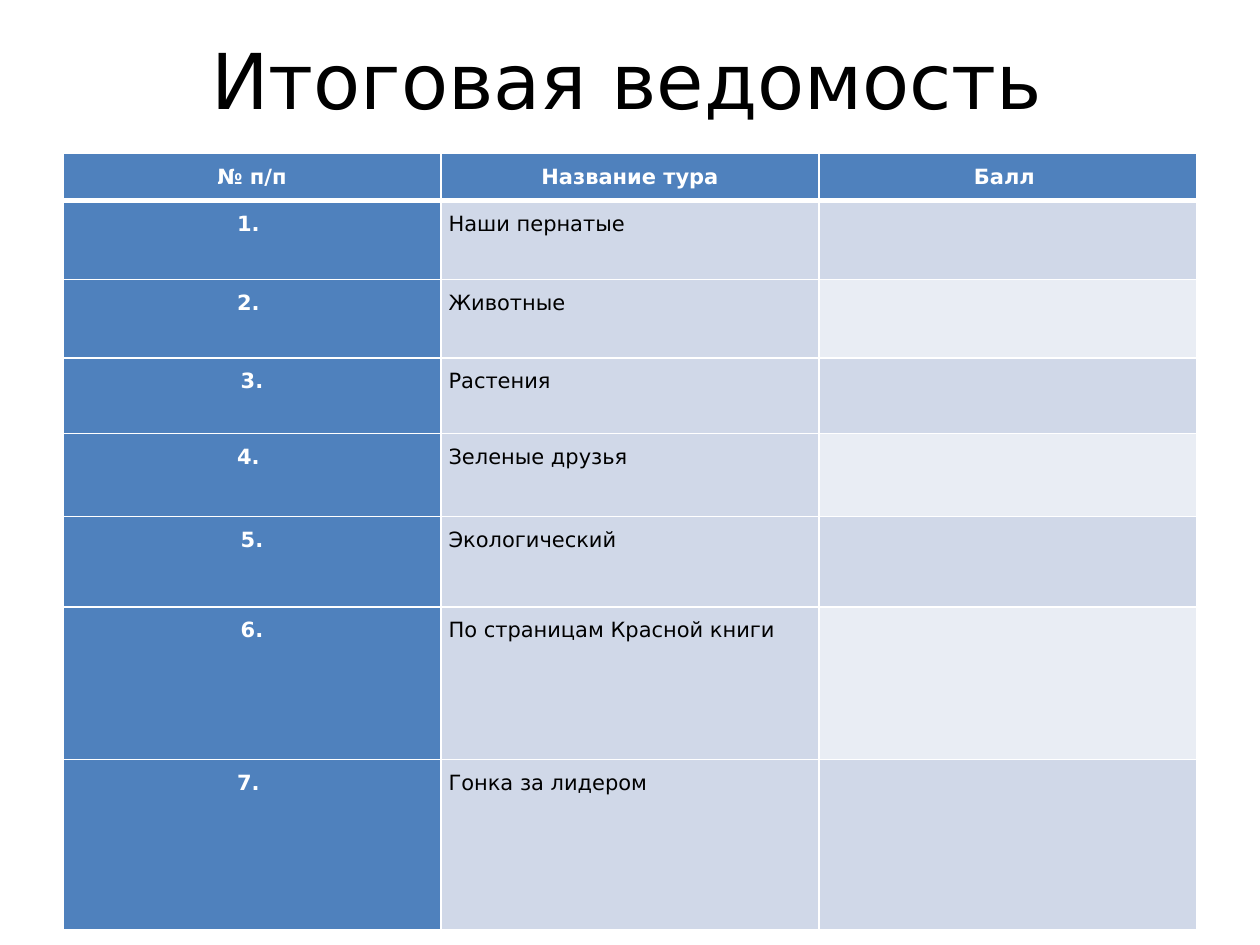
"""Build the final score sheet slide: a title above a table of rounds."""
from lxml import etree
from pptx import Presentation
from pptx.dml.color import RGBColor
from pptx.enum.text import MSO_ANCHOR, PP_ALIGN
from pptx.oxml.ns import qn
from pptx.util import Inches, Pt

CENTER, LEFT = PP_ALIGN.CENTER, PP_ALIGN.LEFT
MIDDLE = MSO_ANCHOR.MIDDLE

THEME = {
    "font": "DejaVu Sans",
    "title_size": 44,
    "cell_size": 12,
    "black": "000000",
    "white": "FFFFFF",
    "accent": "4F81BD",
    "band": "D0D8E8",
    "light_band": "E9EDF4",
    "thin": 1,
    "thick": 3,
}
HEADINGS = ["№ п/п", "Название тура", "Балл "]
ROUNDS = [
    ("1. ", "Наши пернатые"),
    ("2. ", "Животные"),
    ("3.", "Растения"),
    ("4. ", "Зеленые друзья"),
    ("5.", "Экологический"),
    ("6.", "По страницам Красной книги"),
    ("7. ", "Гонка за лидером"),
]
ROW_HEIGHTS = [0.37, 0.63, 0.62, 0.6, 0.66, 0.72, 1.21, 1.35]
COLUMN_WIDTH = 3
CELL_MARGIN = Inches(0.06)


def write(frame, text, size, color, bold, align):
    para = frame.paragraphs[0]
    para.alignment = align
    span = para.add_run()
    span.text = text
    formats = {"name": THEME["font"], "size": Pt(size), "bold": bold}
    for name, value in formats.items():
        setattr(span.font, name, value)
    span.font.color.rgb = RGBColor.from_string(color)
    return para


def add_border(cell, side, width):
    properties = cell._tc.get_or_add_tcPr()
    line = etree.SubElement(properties, qn(f"a:ln{side}"), w=str(Pt(width)))
    fill = etree.SubElement(line, qn("a:solidFill"))
    etree.SubElement(fill, qn("a:srgbClr"), val=THEME["white"])


deck = Presentation()
deck.slide_width, deck.slide_height = Inches(10), Inches(7.5)
blank_layout = deck.slide_layouts[6]
page = deck.slides.add_slide(blank_layout)

title_box = page.shapes.add_textbox(Inches(0.48), 0, Inches(9), Inches(1.25))
title_box.text_frame.word_wrap = True
title_box.text_frame.vertical_anchor = MIDDLE
write(title_box.text_frame, "Итоговая ведомость", THEME["title_size"], THEME["black"], False, CENTER)

records = [HEADINGS] + [[number, name, ""] for number, name in ROUNDS]
table = page.shapes.add_table(
    len(records), len(HEADINGS), Inches(0.5), Inches(1.22),
    Inches(COLUMN_WIDTH * len(HEADINGS)), Inches(sum(ROW_HEIGHTS)),
).table
table.first_col = True
for column in table.columns:
    column.width = Inches(COLUMN_WIDTH)
for row, height in zip(table.rows, ROW_HEIGHTS):
    row.height = Inches(height)

for row_index, record in enumerate(records):
    for column_index, text in enumerate(record):
        cell = table.cell(row_index, column_index)
        is_heading = row_index == 0 or column_index == 0
        widths = {
            "L": THEME["thin"],
            "R": THEME["thin"],
            "T": THEME["thick" if row_index == 1 else "thin"],
            "B": THEME["thick" if row_index == 0 else "thin"],
        }
        for side, width in widths.items():
            add_border(cell, side, width)

        if is_heading:
            fill_color = THEME["accent"]
        elif column_index == 2 and row_index % 2 == 0:
            fill_color = THEME["light_band"]
        else:
            fill_color = THEME["band"]
        cell.fill.solid()
        cell.fill.fore_color.rgb = RGBColor.from_string(fill_color)

        if text:
            for edge in ("left", "top", "right", "bottom"):
                setattr(cell, f"margin_{edge}", CELL_MARGIN)
            para = write(
                cell.text_frame, text, THEME["cell_size"],
                THEME["white" if is_heading else "black"],
                is_heading, CENTER if is_heading else LEFT,
            )
            para.line_spacing = 1.15

deck.save("out.pptx")
